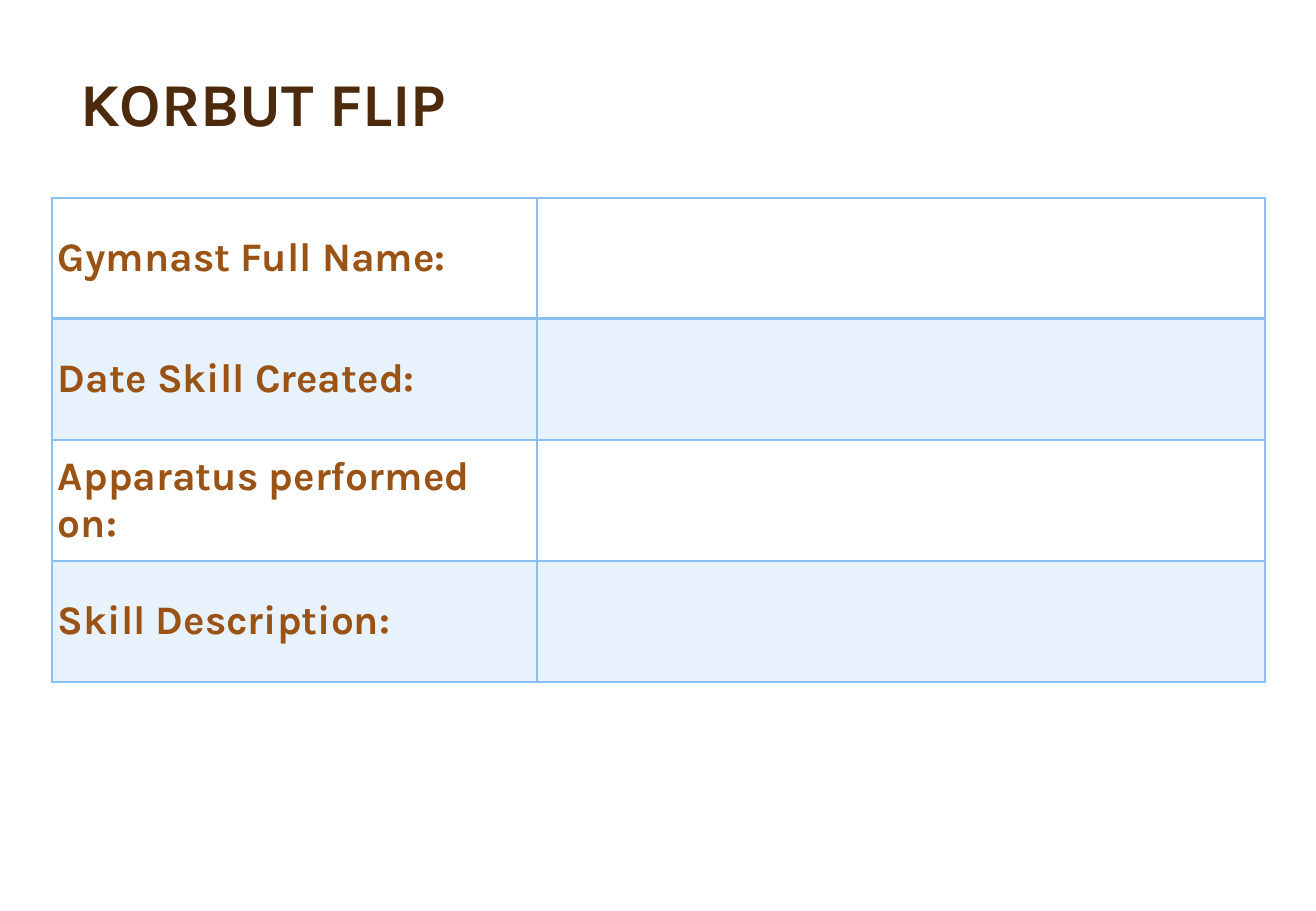
from lxml.etree import SubElement
from pptx import Presentation
from pptx.dml.color import RGBColor
from pptx.enum.text import MSO_ANCHOR
from pptx.oxml.ns import qn
from pptx.util import Pt

TITLE = "KORBUT FLIP"
LABELS = [
    "Gymnast Full Name:",
    "Date Skill Created:",
    "Apparatus performed on:",
    "Skill Description:",
]
COLS = [485, 728]
ROW = 121
LEFT, TOP = 52, 198
PAD = 6
FONT = "Karla"
DARK, BROWN, BLUE, PALE = "4D2A0B", "9A5315", "8BBEF1", "E8F2FC"
SCALE = 7526


def px(n):
    return n * SCALE


def color(code):
    return RGBColor.from_string(code)


def write(frame, text, size, fill, space=1.0):
    frame.word_wrap = True
    para = frame.paragraphs[0]
    para.line_spacing = space
    run = para.add_run()
    run.text = text
    font = run.font
    font.name, font.size, font.bold = FONT, Pt(size), True
    font.color.rgb = color(fill)


def border(cell, side, width):
    props = cell._tc.get_or_add_tcPr()
    line = SubElement(props, qn("a:ln" + side), w=str(Pt(width)))
    fill = SubElement(line, qn("a:solidFill"))
    SubElement(fill, qn("a:srgbClr"), val=BLUE)


def main():
    deck = Presentation()
    deck.slide_width, deck.slide_height = px(1316), px(911)
    slide = deck.slides.add_slide(deck.slide_layouts[5])

    title = slide.shapes.title
    title.left, title.top = px(68), px(56)
    title.width, title.height = px(1086), px(90)
    write(title.text_frame, TITLE, size=36, fill=DARK, space=0.9)
    title.text_frame.vertical_anchor = MSO_ANCHOR.BOTTOM
    title.text_frame.paragraphs[0].alignment = 1

    count = len(LABELS)
    table = slide.shapes.add_table(
        count, len(COLS), px(LEFT), px(TOP), px(sum(COLS)), px(ROW * count)
    ).table
    table.first_row = table.horz_banding = False
    for col, width in zip(table.columns, COLS):
        col.width = px(width)

    for i, label in enumerate(LABELS):
        table.rows[i].height = px(ROW)
        for cell in table.rows[i].cells:
            cell.vertical_anchor = MSO_ANCHOR.MIDDLE
            cell.margin_left = cell.margin_right = px(PAD)
            cell.margin_top = cell.margin_bottom = px(PAD)
            edges = {"L": 1, "R": 1, "T": 2 if i == 1 else 1, "B": 2 if i == 0 else 1}
            for side, width in edges.items():
                border(cell, side, width)
            if i % 2:
                cell.fill.solid()
                cell.fill.fore_color.rgb = color(PALE)
            else:
                cell.fill.background()
        write(table.cell(i, 0).text_frame, label, size=24, fill=BROWN)

    deck.save("out.pptx")


if __name__ == "__main__":
    main()
